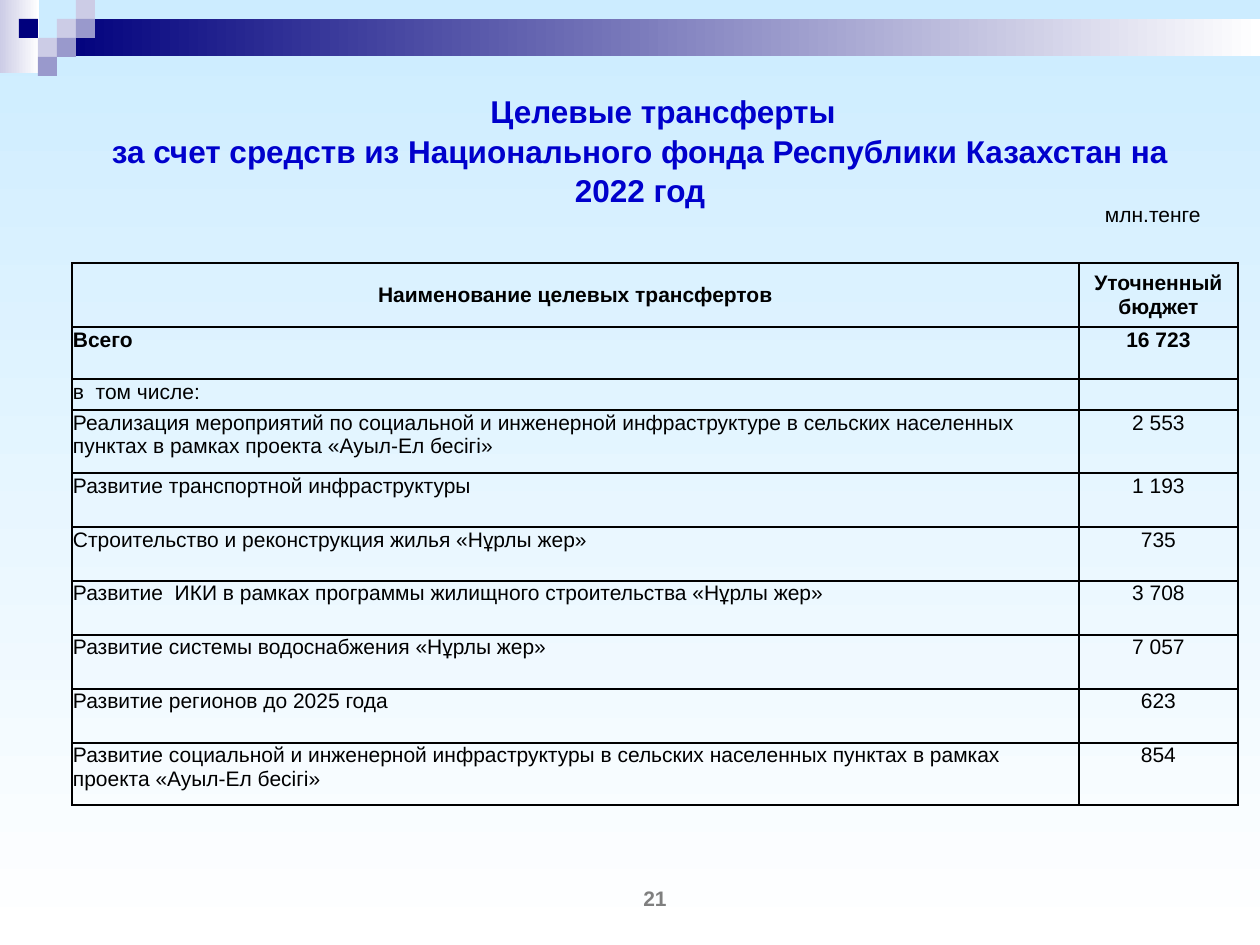
from lxml.etree import SubElement
from pptx import Presentation
from pptx.dml.color import RGBColor
from pptx.enum.shapes import MSO_SHAPE
from pptx.enum.text import MSO_ANCHOR, PP_ALIGN
from pptx.oxml import parse_xml
from pptx.oxml.ns import nsdecls, qn
from pptx.util import Pt

SCALE = 914400 / 126
UNIT = 19
COLORS = {
    "navy": "00007D", "lilac": "CCCCE6", "violet": "9999CC", "white": "FFFFFF",
    "sky": "CCECFF", "title": "0000CC", "black": "000000", "gray": "7F7F7F",
}
SQUARES = [
    (3, 1, "lilac"), (4, 0, "lilac"), (4, 1, "violet"), (2, 2, "lilac"),
    (1, 1, "navy"), (3, 2, "violet"), (2, 3, "violet"),
]
TITLE = [
    ("Целевые трансферты", 0),
    ("за счет средств из Национального фонда Республики Казахстан на", 46),
    ("2022 год", 0),
]
COLS = [1007, 159]
ROWS = [
    (64, "Наименование целевых трансфертов", "Уточненный бюджет"),
    (52, "Всего", "16 723"),
    (31, "в  том числе:", ""),
    (63, "Реализация мероприятий по социальной и инженерной инфраструктуре в сельских "
         "населенных пунктах в рамках проекта «Ауыл-Ел бесігі»", "2 553"),
    (54, "Развитие транспортной инфраструктуры", "1 193"),
    (54, "Строительство и реконструкция жилья «Нұрлы жер»", "735"),
    (54, "Развитие  ИКИ в рамках программы жилищного строительства «Нұрлы жер»", "3 708"),
    (54, "Развитие системы водоснабжения «Нұрлы жер»", "7 057"),
    (54, "Развитие регионов до 2025 года", "623"),
    (62, "Развитие социальной и инженерной инфраструктуры в сельских населенных "
         "пунктах в рамках проекта «Ауыл-Ел бесігі»", "854"),
]


def px(n):
    return round(n * SCALE)


def rgb(name):
    return RGBColor.from_string(COLORS[name])


def blend(fill, first, last, angle):
    fill.gradient()
    fill.gradient_angle = angle
    for stop, name in zip(fill.gradient_stops, (first, last)):
        stop.color.rgb = rgb(name)


def write(para, text, size=12, color="black", bold=False, align=PP_ALIGN.LEFT,
          right=0, space=None):
    para.alignment = align
    para.line_spacing = space
    if right:
        para._p.get_or_add_pPr().set("marR", str(px(right)))
    if not text:
        SubElement(para._p, qn("a:endParaRPr"), sz=str(size * 100))
        return
    run = para.add_run()
    run.text = text
    run.font.name = "Arial"
    run.font.size = Pt(size)
    run.font.bold = bold
    run.font.color.rgb = rgb(color)


def block(slide, x, y, w, h, color, fade=None):
    shape = slide.shapes.add_shape(MSO_SHAPE.RECTANGLE, px(x), px(y), px(w), px(h))
    shape.shadow.inherit = False
    shape.line.fill.background()
    if fade:
        blend(shape.fill, color, fade, 0)
    else:
        shape.fill.solid()
        shape.fill.fore_color.rgb = rgb(color)


def label(slide, x, y, w, h, lines, **style):
    frame = slide.shapes.add_textbox(px(x), px(y), px(w), px(h)).text_frame
    frame.word_wrap = True
    frame.vertical_anchor = MSO_ANCHOR.MIDDLE
    for i, (text, right) in enumerate(lines):
        para = frame.add_paragraph() if i else frame.paragraphs[0]
        write(para, text, right=right, **style)


def border(cell):
    props = cell._tc.get_or_add_tcPr()
    for i, side in enumerate(("lnL", "lnR", "lnT", "lnB")):
        props.insert(i, parse_xml(
            f'<a:{side} {nsdecls("a")} w="{Pt(1)}"><a:solidFill>'
            f'<a:srgbClr val="{COLORS["black"]}"/></a:solidFill></a:{side}>'))


def grid(slide, x, y):
    table = slide.shapes.add_table(
        len(ROWS), len(COLS), px(x), px(y), px(sum(COLS)),
        px(sum(row[0] for row in ROWS))).table
    table.horz_banding = False
    for col, width in zip(table.columns, COLS):
        col.width = px(width)
    for r, (height, *texts) in enumerate(ROWS):
        table.rows[r].height = px(height)
        for c, text in enumerate(texts):
            cell = table.cell(r, c)
            cell.fill.background()
            border(cell)
            if r == 0:
                cell.vertical_anchor = MSO_ANCHOR.MIDDLE
            else:
                cell.margin_left = cell.margin_right = cell.margin_top = px(1)
                cell.margin_bottom = 0
            middle = r == 0 or c == 1
            write(cell.text_frame.paragraphs[0], text, bold=r < 2,
                  align=PP_ALIGN.CENTER if middle else PP_ALIGN.LEFT)


def main():
    """Build the slide of targeted transfers and save it."""
    deck = Presentation()
    deck.slide_width, deck.slide_height = px(1260), px(945)
    slide = deck.slides.add_slide(deck.slide_layouts[6])
    blend(slide.background.fill, "sky", "white", 270)
    block(slide, 0, 0, 39, 73, "lilac", fade="white")
    block(slide, 57, UNIT, 1203, 37, "navy", fade="white")
    for col, row, color in SQUARES:
        block(slide, col * UNIT, row * UNIT, UNIT, UNIT, color)
    label(slide, 62, 120, 1202, 59, TITLE, size=18, color="title", bold=True,
          align=PP_ALIGN.CENTER, space=1.05)
    grid(slide, 72, 263)
    label(slide, 1039, 199, 174, 30, [("млн.тенге", 0)], align=PP_ALIGN.RIGHT)
    label(slide, 529, 883, 252, 30, [("21", 0)], color="gray", bold=True,
          align=PP_ALIGN.CENTER)
    deck.save("out.pptx")


if __name__ == "__main__":
    main()
